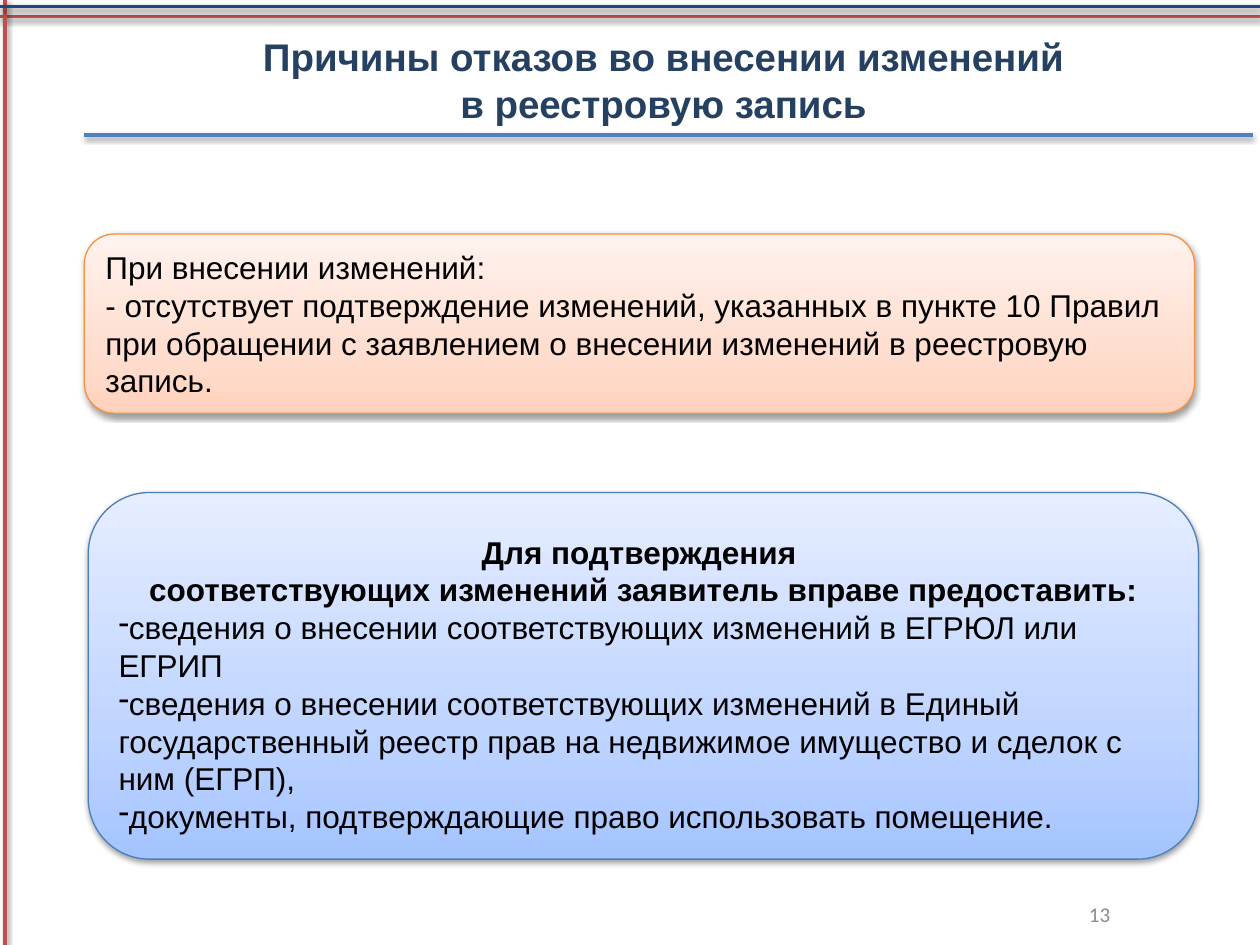
from copy import deepcopy

from lxml import etree
from pptx import Presentation
from pptx.dml.color import RGBColor
from pptx.enum.shapes import MSO_CONNECTOR, MSO_SHAPE
from pptx.enum.text import MSO_ANCHOR, PP_ALIGN
from pptx.oxml.ns import qn
from pptx.util import Cm, Pt

STRAIGHT = MSO_CONNECTOR.STRAIGHT
ROUND = MSO_SHAPE.ROUNDED_RECTANGLE
MIDDLE, BOTTOM = MSO_ANCHOR.MIDDLE, MSO_ANCHOR.BOTTOM
LEFT, CENTER, RIGHT = PP_ALIGN.LEFT, PP_ALIGN.CENTER, PP_ALIGN.RIGHT

RED = RGBColor(0xC0, 0x50, 0x4D)
NAVY = RGBColor(0x1F, 0x49, 0x7D)
BLUE = RGBColor(0x4F, 0x81, 0xBD)
TITLE = RGBColor(0x25, 0x40, 0x61)
GRAY = RGBColor(0x8C, 0x8C, 0x8C)
BLACK = RGBColor(0, 0, 0)
ORANGE_EDGE = RGBColor(0xF6, 0x92, 0x40)
BLUE_EDGE = RGBColor(0x4B, 0x7E, 0xBC)
PEACH = [RGBColor(0xFF, 0xD2, 0xBD), RGBColor(0xFF, 0xDE, 0xD0), RGBColor(0xFF, 0xF2, 0xED)]
SKY = [RGBColor(0xA4, 0xC4, 0xFF), RGBColor(0xBF, 0xD4, 0xFF), RGBColor(0xE6, 0xEE, 0xFF)]


def add_shadow(shape):
    effects = etree.SubElement(shape.element.spPr, qn("a:effectLst"))
    outer = etree.SubElement(effects, qn("a:outerShdw"), blurRad="40000",
                             dist="20000", dir="5400000", rotWithShape="0")
    color = etree.SubElement(outer, qn("a:srgbClr"), val="000000")
    etree.SubElement(color, qn("a:alpha"), val="38000")


def write(shape, rows, size, color, anchor, font="Arial"):
    """Each row is text, alignment, bold, dash bullet."""
    frame = shape.text_frame
    frame.word_wrap = True
    frame.vertical_anchor = anchor
    frame.text = "\n".join(row[0] for row in rows)
    for para, (text, align, bold, dash) in zip(frame.paragraphs, rows):
        para.text = text
        para.alignment = align
        if dash:
            props = para._p.get_or_add_pPr()
            props.set("marL", "0")
            props.set("indent", str(-Cm(0.79)))
            etree.SubElement(props, qn("a:buFontTx"))
            etree.SubElement(props, qn("a:buChar"), char="-")
        for run in para.runs:
            run.font.name = font
            run.font.size = Pt(size)
            run.font.bold = bold
            run.font.color.rgb = color


deck = Presentation()
deck.slide_width, deck.slide_height = Cm(25.4), Cm(19.05)
slide = deck.slides.add_slide(deck.slide_layouts[6])
shapes = slide.shapes

# Frame lines and the rule under the title
for x1, y1, x2, y2, color in [
    (25.4, 0.33, 0, 0.33, RED),
    (0.1, 0, 0.1, 19.05, RED),
    (0, 0.13, 25.4, 0.13, NAVY),
    (1.7, 2.72, 25.25, 2.72, BLUE),
]:
    line = shapes.add_connector(STRAIGHT, Cm(x1), Cm(y1), Cm(x2), Cm(y2))
    line.line.color.rgb = color
    line.line.width = Pt(2)
    add_shadow(line)

# Page number
page = shapes.add_textbox(Cm(16.71), Cm(17.91), Cm(5.92), Cm(1.02))
write(page, [("13", RIGHT, False, False)], 12, GRAY, MIDDLE, "Calibri")

# Title
title = shapes.add_textbox(Cm(1.57), Cm(0.41), Cm(23.83), Cm(2.39))
write(title, [("Причины отказов во внесении изменений \vв реестровую запись ",
               CENTER, True, False)], 22, TITLE, MIDDLE)

# Panels: reasons above, supporting papers below
reasons = [
    ("При внесении изменений:", LEFT, False, False),
    ("- отсутствует подтверждение изменений, указанных в пункте 10 Правил "
     "при обращении с заявлением о внесении изменений в реестровую запись.",
     LEFT, False, False),
]
papers = [
    ("Для подтверждения ", CENTER, True, False),
    ("соответствующих изменений заявитель вправе предоставить:", CENTER, True, False),
    ("сведения о внесении соответствующих изменений в ЕГРЮЛ или ЕГРИП",
     LEFT, False, True),
    ("сведения о внесении соответствующих изменений в Единый государственный "
     "реестр прав на недвижимое имущество и сделок с ним (ЕГРП),", LEFT, False, True),
    ("документы, подтверждающие право использовать помещение.", LEFT, False, True),
]
for x, y, height, tints, edge, anchor, rows in [
    (1.7, 4.72, 3.61, PEACH, ORANGE_EDGE, MIDDLE, reasons),
    (1.78, 9.93, 7.39, SKY, BLUE_EDGE, BOTTOM, papers),
]:
    panel = shapes.add_shape(ROUND, Cm(x), Cm(y), Cm(22.38), Cm(height))
    panel.fill.gradient()
    panel.fill.gradient_angle = 90
    stops = panel.element.spPr.find(qn("a:gradFill")).find(qn("a:gsLst"))
    stops.append(deepcopy(stops[0]))
    for stop, place, tint in zip(panel.fill.gradient_stops, (0, 0.35, 1), tints):
        stop.position = place
        stop.color.rgb = tint
    panel.line.color.rgb = edge
    panel.line.width = Pt(0.75)
    add_shadow(panel)
    write(panel, rows, 18, BLACK, anchor)

deck.save("out.pptx")
